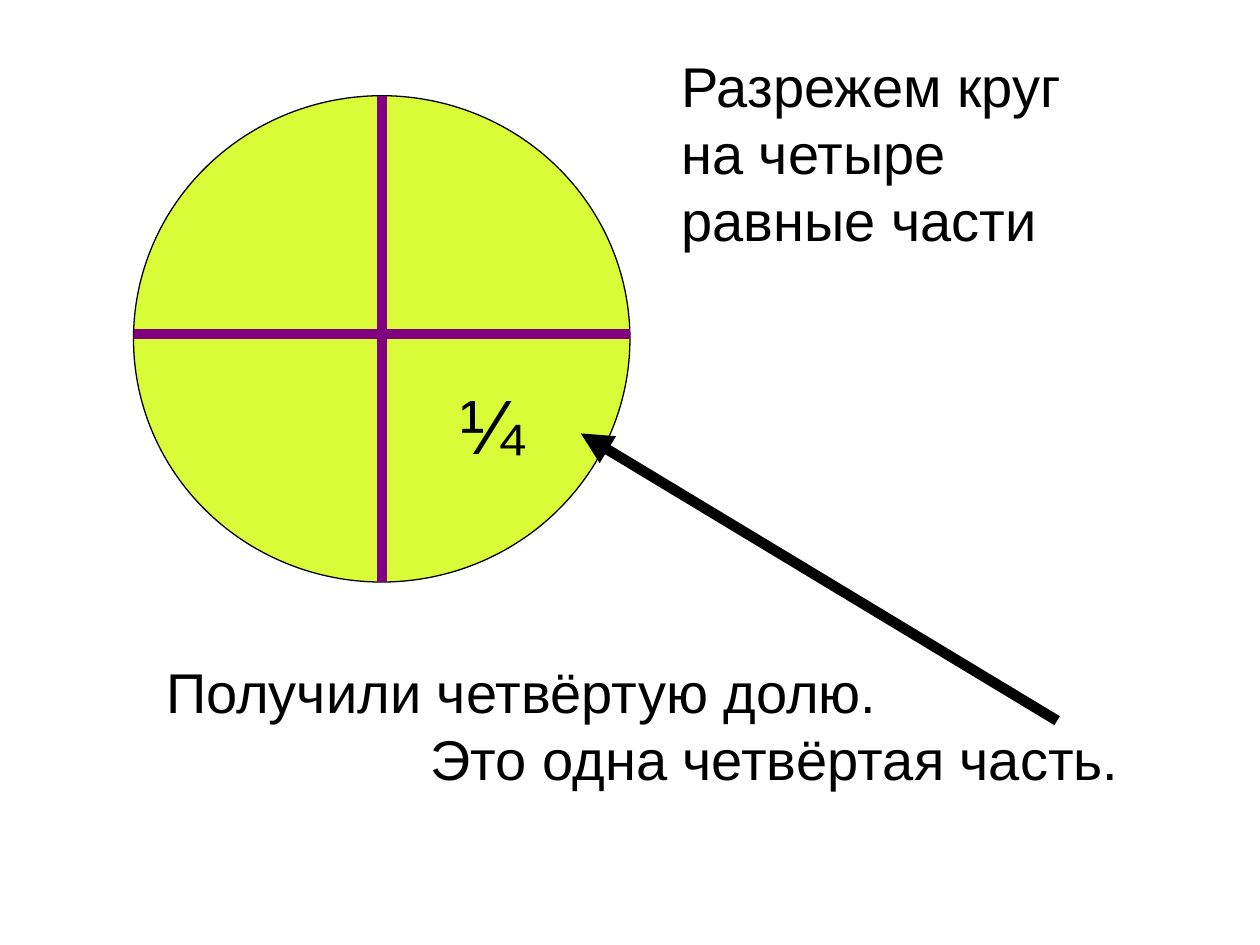
from pptx import Presentation
from pptx.dml.color import RGBColor
from pptx.enum.shapes import MSO_CONNECTOR, MSO_SHAPE
from pptx.oxml.ns import qn
from pptx.util import Inches, Pt
from lxml.etree import SubElement

LIME = RGBColor(0xDA, 0xFB, 0x37)
PURPLE = RGBColor(0x80, 0x00, 0x80)
BLACK = RGBColor(0x00, 0x00, 0x00)


def add_text(slide, box, lines, size=32, font="Arial", color=BLACK, indents=()):
    """Write one paragraph per line; indents maps line numbers to inches."""
    text_box = slide.shapes.add_textbox(*map(Inches, box))
    frame = text_box.text_frame
    frame.word_wrap = True
    indents = dict(indents)
    for number, line in enumerate(lines):
        paragraph = frame.paragraphs[0] if number == 0 else frame.add_paragraph()
        if number in indents:
            properties = paragraph._p.get_or_add_pPr()
            properties.set("marL", str(Inches(indents[number])))
            properties.set("indent", "0")
        run = paragraph.add_run()
        run.text = line
        run.font.size = Pt(size)
        run.font.name = font
        run.font.color.rgb = color


def add_line(slide, start, end, color, arrow=False):
    line = slide.shapes.add_connector(
        MSO_CONNECTOR.STRAIGHT, *map(Inches, (*start, *end)))
    line.line.color.rgb = color
    line.line.width = Pt(6)
    if arrow:
        SubElement(line.line._get_or_add_ln(), qn("a:tailEnd"), type="triangle")
    SubElement(line._element.spPr, qn("a:effectLst"))


def add_quartered_circle(slide, box):
    left, top, width, height = box
    middle, cut = left + width / 2, top + 1.89

    # Circle
    circle = slide.shapes.add_shape(MSO_SHAPE.OVAL, *map(Inches, box))
    circle.shadow.inherit = False
    circle.fill.solid()
    circle.fill.fore_color.rgb = LIME
    circle.line.color.rgb = BLACK
    circle.line.width = Pt(0.75)

    # Cuts: the full width, then the two upright halves
    add_line(slide, (left, cut), (left + width, cut), PURPLE)
    for edge in (top + height, top):
        add_line(slide, (middle, edge), (middle, cut), PURPLE)

    # Name of one part
    add_text(slide, (left + 2.5, top + 2.19, 0.84, 0.83), ["¼"], size=44)


def add_conclusion(slide, box):
    left, top, width, height = box
    add_text(slide, box,
             ["Получили четвёртую долю.", "Это одна четвёртая часть."],
             indents={1: 2.1})
    # Arrow from the conclusion to the quarter
    add_line(slide, (left + 7.17, top + 0.55), (left + 3.39, top - 1.73),
             BLACK, arrow=True)


def main():
    presentation = Presentation()
    presentation.slide_width = Inches(10)
    presentation.slide_height = Inches(7.5)
    slide = presentation.slides.add_slide(presentation.slide_layouts[6])

    add_quartered_circle(slide, (1.06, 0.76, 3.94, 3.86))
    # Task
    add_text(slide, (5.31, 0.36, 3.36, 1.7),
             ["Разрежем круг", "на четыре", "равные части"])
    add_conclusion(slide, (1.22, 5.17, 7.91, 1.17))

    presentation.save("out.pptx")


if __name__ == "__main__":
    main()
